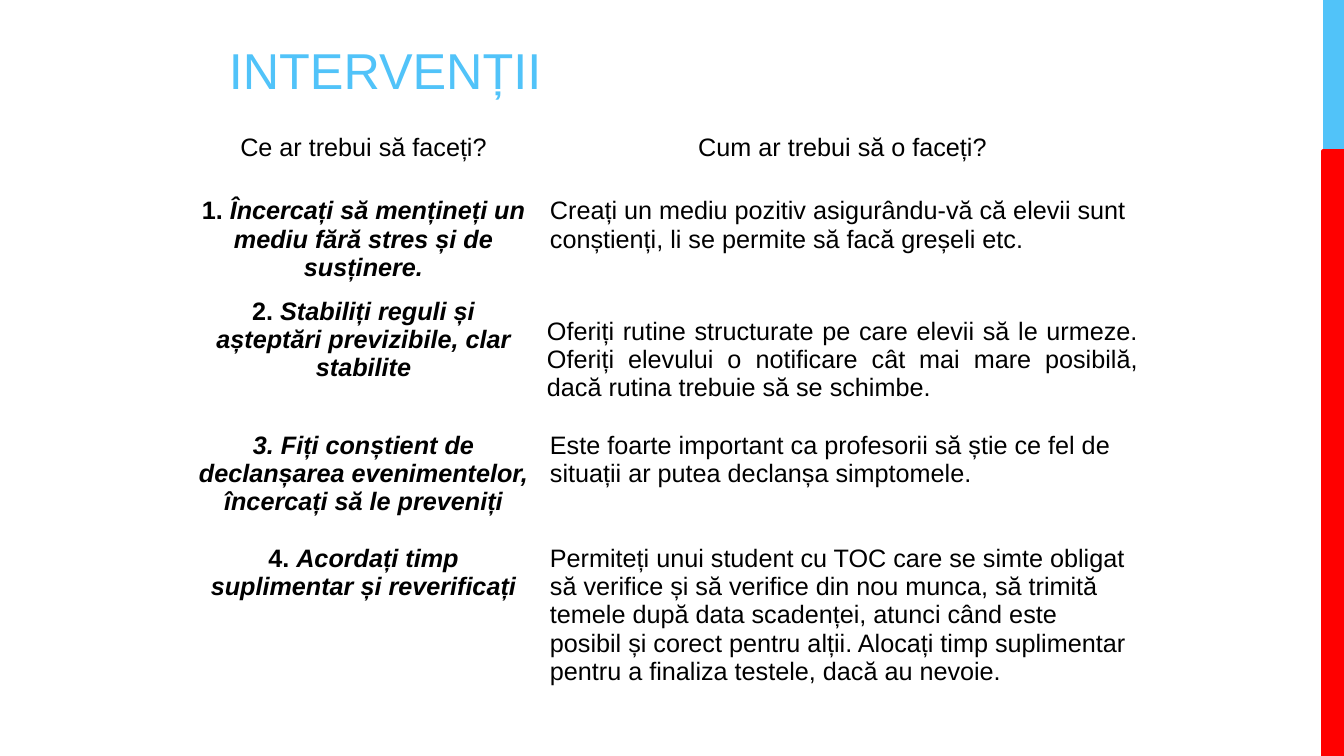
from dataclasses import dataclass

from pptx import Presentation
from pptx.dml.color import RGBColor
from pptx.enum.shapes import MSO_SHAPE
from pptx.enum.text import MSO_ANCHOR, PP_ALIGN
from pptx.util import Pt

RECTANGLE = MSO_SHAPE.RECTANGLE
TOP, MIDDLE, BOTTOM = MSO_ANCHOR.TOP, MSO_ANCHOR.MIDDLE, MSO_ANCHOR.BOTTOM
LEFT, CENTER, JUSTIFY = PP_ALIGN.LEFT, PP_ALIGN.CENTER, PP_ALIGN.JUSTIFY
SLIDE_WIDTH, SLIDE_HEIGHT = 1344, 756
EMU_PER_PX = 12192000 / SLIDE_WIDTH


@dataclass(frozen=True)
class Theme:
    font: str = "Arial"
    title_size: int = 36
    body_size: int = 18
    accent: RGBColor = RGBColor(0x51, 0xC3, 0xF9)
    red: RGBColor = RGBColor(0xFF, 0x00, 0x00)
    ink: RGBColor = RGBColor(0x00, 0x00, 0x00)


def px(length):
    return round(length * EMU_PER_PX)


class SlideBuilder:
    def __init__(self, slide, theme):
        self.shapes = slide.shapes
        self.theme = theme

    def set_font(self, paragraph, size, color):
        font = paragraph.font
        font.name = self.theme.font
        font.size = Pt(size)
        font.color.rgb = color

    def bar(self, left, top, width, height, color, outline=0):
        bar = self.shapes.add_shape(RECTANGLE, px(left), px(top), px(width), px(height))
        bar.shadow.inherit = False
        bar.fill.solid()
        bar.fill.fore_color.rgb = color
        if outline:
            bar.line.color.rgb = color
            bar.line.width = Pt(outline)
        else:
            bar.line.fill.background()

    def title(self, left, top, width, height, text):
        frame = self.shapes.add_textbox(px(left), px(top), px(width), px(height)).text_frame
        frame.word_wrap = True
        frame.vertical_anchor = BOTTOM
        heading = frame.paragraphs[0]
        heading.text = text
        self.set_font(heading, self.theme.title_size, self.theme.accent)

    def cell(self, cell, text, align, anchor=TOP, margins=(10, 5), number="", bold=False):
        cell.fill.background()
        cell.vertical_anchor = anchor
        cell.margin_left = cell.margin_right = px(margins[0])
        cell.margin_top = cell.margin_bottom = px(margins[1])
        paragraph = cell.text_frame.paragraphs[0]
        paragraph.alignment = align
        self.set_font(paragraph, self.theme.body_size, self.theme.ink)
        paragraph.font.bold = bold
        if number:
            paragraph.add_run().text = number
        body = paragraph.add_run()
        body.text = text
        body.font.italic = bold

    def table(self, left, top, widths, heights):
        table = self.shapes.add_table(
            len(heights), len(widths), px(left), px(top), px(sum(widths)), px(sum(heights))
        ).table
        table.first_row = table.horz_banding = False
        for column, width in zip(table.columns, widths):
            column.width = px(width)
        for row, height in zip(table.rows, heights):
            row.height = px(height)
        return table


HEADERS = ["Ce ar trebui să faceți?", "Cum ar trebui să o faceți?"]
INTERVENTIONS = [
    ("1. ", "Încercați să mențineți un mediu fără stres și de susținere.",
     "Creați un mediu pozitiv asigurându-vă că elevii sunt conștienți, "
     "li se permite să facă greșeli etc.", {"align": LEFT}),
    ("2. ", "Stabiliți reguli și așteptări previzibile, clar stabilite",
     "Oferiți rutine structurate pe care elevii să le urmeze. Oferiți elevului o "
     "notificare cât mai mare posibilă, dacă rutina trebuie să se schimbe.",
     {"align": JUSTIFY, "anchor": MIDDLE, "margins": (7, 0)}),
    ("", "3. Fiți conștient de declanșarea evenimentelor, încercați să le preveniți",
     "Este foarte important ca profesorii să știe ce fel de situații ar putea "
     "declanșa simptomele.", {"align": LEFT}),
    ("4. ", "Acordați timp suplimentar și reverificați",
     "Permiteți unui student cu TOC care se simte obligat să verifice și să verifice "
     "din nou munca, să trimită temele după data scadenței, atunci când este posibil "
     "și corect pentru alții. Alocați timp suplimentar pentru a finaliza testele, "
     "dacă au nevoie.", {"align": LEFT}),
]


def main():
    presentation = Presentation()
    presentation.slide_width = px(SLIDE_WIDTH)
    presentation.slide_height = px(SLIDE_HEIGHT)
    theme = Theme()
    builder = SlideBuilder(
        presentation.slides.add_slide(presentation.slide_layouts[6]), theme
    )

    builder.bar(1323, 0, 21, 151, theme.accent)
    builder.bar(1323, 151, 21, 605, theme.red, outline=2.25)
    builder.title(219, 21, 638, 84, "INTERVENȚII")

    interventions = builder.table(187, 129, [353, 605], [63, 82, 134, 113, 190])
    for column, header in enumerate(HEADERS):
        builder.cell(interventions.cell(0, column), header, CENTER)
    for row, (number, goal, method, layout) in enumerate(INTERVENTIONS, start=1):
        builder.cell(interventions.cell(row, 0), goal, CENTER, number=number, bold=True)
        builder.cell(interventions.cell(row, 1), method, **layout)

    presentation.save("out.pptx")


if __name__ == "__main__":
    main()
